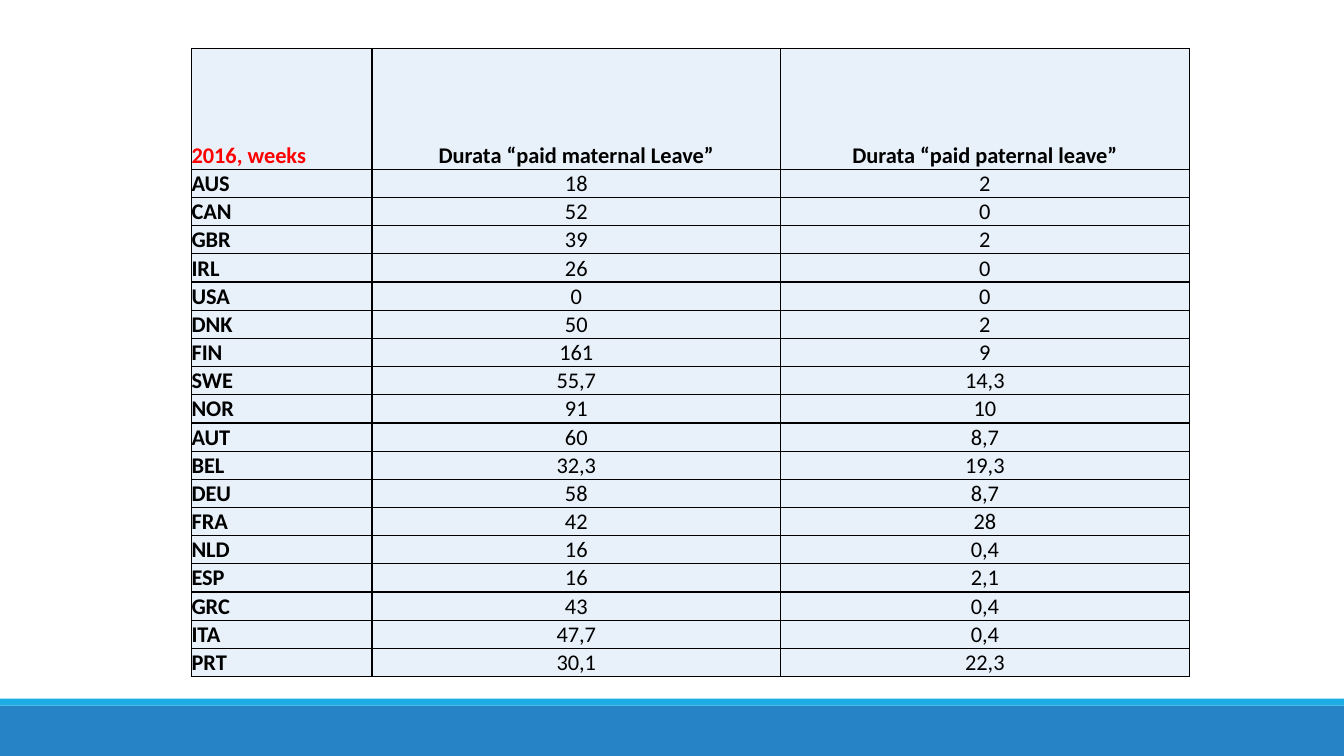
import dataclasses

import pptx
import pptx.dml.color
import pptx.enum.shapes
import pptx.enum.text
import pptx.oxml
import pptx.oxml.ns
import pptx.presentation
import pptx.slide
import pptx.table
import pptx.util

SLIDE_WIDTH = pptx.util.Inches(13.333)
SLIDE_HEIGHT = pptx.util.Inches(7.5)
FONT = "Calibri"
BLACK = "000000"
RED = "FF0000"
CELL_FILL = "E8F1FA"

TABLE_LEFT, TABLE_TOP = 14.25, 6.4
COLUMN_SHARES = (13.43, 30.4, 30.4)
HEADER_SHARE, ROW_SHARE = 16, 3.73
HEADERS = ("2016, weeks", "Durata “paid maternal Leave”", "Durata “paid paternal leave”")


@dataclasses.dataclass(frozen=True)
class Bar:
    top: float
    height: float
    fill: str


@dataclasses.dataclass(frozen=True)
class Leave:
    country: str
    maternal: str
    paternal: str


BARS = (Bar(93.33, 6.67, "2683C6"), Bar(92.4, 0.93, "1CADE4"))

LEAVES = (
    Leave("AUS", "18", "2"),
    Leave("CAN", "52", "0"),
    Leave("GBR", "39", "2"),
    Leave("IRL", "26", "0"),
    Leave("USA", "0", "0"),
    Leave("DNK", "50", "2"),
    Leave("FIN", "161", "9"),
    Leave("SWE", "55,7", "14,3"),
    Leave("NOR", "91", "10"),
    Leave("AUT", "60", "8,7"),
    Leave("BEL", "32,3", "19,3"),
    Leave("DEU", "58", "8,7"),
    Leave("FRA", "42", "28"),
    Leave("NLD", "16", "0,4"),
    Leave("ESP", "16", "2,1"),
    Leave("GRC", "43", "0,4"),
    Leave("ITA", "47,7", "0,4"),
    Leave("PRT", "30,1", "22,3"),
)


def across(percent: float) -> int:
    return round(SLIDE_WIDTH * percent / 100)


def down(percent: float) -> int:
    return round(SLIDE_HEIGHT * percent / 100)


def color(value: str) -> pptx.dml.color.RGBColor:
    return pptx.dml.color.RGBColor.from_string(value)


def draw_bar(slide: pptx.slide.Slide, bar: Bar) -> None:
    shape = slide.shapes.add_shape(
        pptx.enum.shapes.MSO_SHAPE.RECTANGLE, 0, down(bar.top), SLIDE_WIDTH, down(bar.height)
    )
    shape.shadow.inherit = False
    shape.fill.solid()
    shape.fill.fore_color.rgb = color(bar.fill)
    shape.line.fill.background()


def add_borders(cell: pptx.table._Cell, width: float = 1) -> None:
    properties = cell._tc.get_or_add_tcPr()
    for position, side in enumerate(("lnL", "lnR", "lnT", "lnB")):
        border = pptx.oxml.parse_xml(
            f'<a:{side} {pptx.oxml.ns.nsdecls("a")} w="{pptx.util.Pt(width)}">'
            f'<a:solidFill><a:srgbClr val="{BLACK}"/></a:solidFill></a:{side}>'
        )
        properties.insert(position, border)


def write_text(
    cell: pptx.table._Cell,
    text: str,
    *,
    bold: bool = False,
    centered: bool = False,
    text_color: str = BLACK,
) -> None:
    alignment = pptx.enum.text.PP_ALIGN
    paragraph = cell.text_frame.paragraphs[0]
    paragraph.alignment = alignment.CENTER if centered else alignment.LEFT
    run = paragraph.add_run()
    run.text = text
    run.font.name = FONT
    run.font.size = pptx.util.Pt(16)
    run.font.bold = bold
    run.font.color.rgb = color(text_color)


def format_cell(cell: pptx.table._Cell) -> None:
    cell.margin_left = cell.margin_right = cell.margin_top = cell.margin_bottom = 0
    cell.vertical_anchor = pptx.enum.text.MSO_ANCHOR.BOTTOM
    cell.fill.solid()
    cell.fill.fore_color.rgb = color(CELL_FILL)
    add_borders(cell)


def draw_table(slide: pptx.slide.Slide, leaves: tuple[Leave, ...]) -> None:
    rows = [HEADERS, *map(dataclasses.astuple, leaves)]
    row_shares = [HEADER_SHARE] + [ROW_SHARE] * len(leaves)
    table = slide.shapes.add_table(
        len(rows), len(HEADERS), across(TABLE_LEFT), down(TABLE_TOP),
        across(sum(COLUMN_SHARES)), down(sum(row_shares)),
    ).table
    table.horz_banding = False
    for column, share in zip(table.columns, COLUMN_SHARES):
        column.width = across(share)
    for row_index, (values, share) in enumerate(zip(rows, row_shares)):
        table.rows[row_index].height = down(share)
        for column_index, value in enumerate(values):
            cell = table.cell(row_index, column_index)
            format_cell(cell)
            write_text(
                cell,
                value,
                bold=row_index == 0 or column_index == 0,
                centered=column_index > 0,
                text_color=RED if row_index == column_index == 0 else BLACK,
            )


def main() -> None:
    presentation = pptx.Presentation()
    presentation.slide_width = SLIDE_WIDTH
    presentation.slide_height = SLIDE_HEIGHT
    slide = presentation.slides.add_slide(presentation.slide_layouts[6])
    for bar in BARS:
        draw_bar(slide, bar)
    draw_table(slide, LEAVES)
    presentation.save("out.pptx")


if __name__ == "__main__":
    main()
